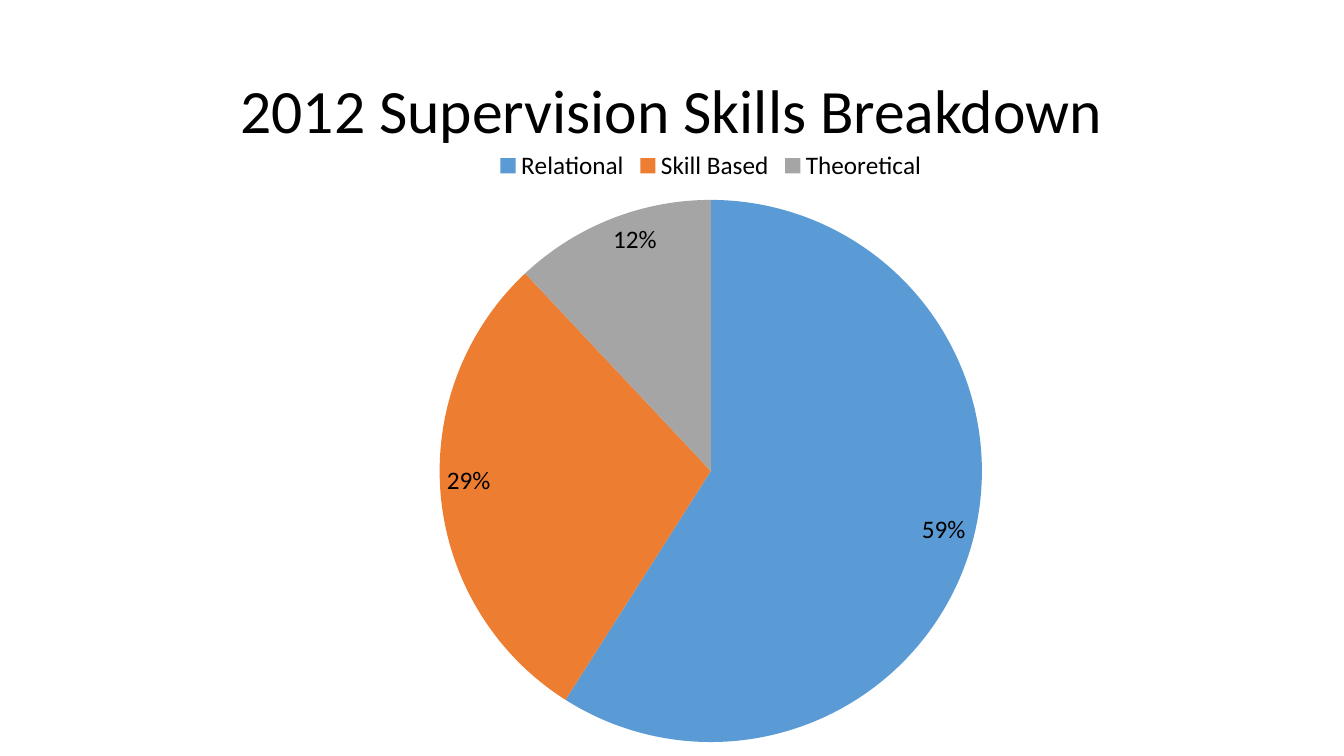
from dataclasses import dataclass

from pptx import Presentation
from pptx.chart.data import CategoryChartData
from pptx.dml.color import RGBColor
from pptx.enum.chart import XL_CHART_TYPE, XL_LABEL_POSITION, XL_LEGEND_POSITION
from pptx.enum.text import MSO_ANCHOR, PP_ALIGN
from pptx.util import Inches, Pt

PIE = XL_CHART_TYPE.PIE
INSIDE_END = XL_LABEL_POSITION.INSIDE_END
LEGEND_TOP = XL_LEGEND_POSITION.TOP
MIDDLE = MSO_ANCHOR.MIDDLE
CENTER = PP_ALIGN.CENTER

SLIDE_WIDTH, SLIDE_HEIGHT = 13.33, 7.5
BLANK_LAYOUT = 6


@dataclass(frozen=True)
class Theme:
    font: str = "Calibri"
    title_size: int = 44
    chart_size: int = 18
    text: str = "000000"
    background: str = "FFFFFF"


THEME = Theme()

# Skill: (share in percent, slice colour)
SKILLS = {
    "Relational": (59, "5B9BD5"),
    "Skill Based": (29, "ED7D31"),
    "Theoretical": (12, "A5A5A5"),
}


def style_font(font, size):
    font.name = THEME.font
    font.size = Pt(size)
    font.color.rgb = RGBColor.from_string(THEME.text)


def paint(fill, colour):
    fill.solid()
    fill.fore_color.rgb = RGBColor.from_string(colour)


def add_title(slide, text, left, top, width, height):
    box = slide.shapes.add_textbox(*map(Inches, (left, top, width, height)))
    frame = box.text_frame
    frame.word_wrap = True
    frame.vertical_anchor = MIDDLE
    paragraph = frame.paragraphs[0]
    paragraph.text = text
    paragraph.alignment = CENTER
    paragraph.line_spacing = 0.9
    style_font(paragraph.font, THEME.title_size)


def add_skills_pie(slide, skills, left, top, width, height):
    data = CategoryChartData()
    data.categories = list(skills)
    data.add_series("Series 1", [share for share, _ in skills.values()])
    frame = slide.shapes.add_chart(
        PIE, *map(Inches, (left, top, width, height)), data)
    chart = frame.chart
    chart.has_title = False
    style_font(chart.font, THEME.chart_size)

    # Legend
    chart.has_legend = True
    chart.legend.position = LEGEND_TOP
    chart.legend.include_in_layout = False

    # Slices
    plot = chart.plots[0]
    plot.vary_by_categories = True
    for index, (_, colour) in enumerate(skills.values()):
        paint(plot.series[0].points[index].format.fill, colour)

    # Percentage labels
    plot.has_data_labels = True
    labels = plot.data_labels
    labels.show_percentage = True
    labels.show_value = False
    labels.number_format = "0%"
    labels.number_format_is_linked = False
    labels.position = INSIDE_END
    style_font(labels.font, THEME.chart_size)


def main():
    presentation = Presentation()
    presentation.slide_width = Inches(SLIDE_WIDTH)
    presentation.slide_height = Inches(SLIDE_HEIGHT)
    slide = presentation.slides.add_slide(
        presentation.slide_layouts[BLANK_LAYOUT])
    paint(slide.background.fill, THEME.background)

    # Title, centred across the slide
    title_width = 11.5
    add_title(slide, "2012 Supervision Skills Breakdown",
              (SLIDE_WIDTH - title_width) / 2, 0.4, title_width, 1.45)

    # Chart, reaching down to the slide's bottom edge
    chart_top = 1.37
    add_skills_pie(slide, SKILLS, 1.45, chart_top, 11.2,
                   SLIDE_HEIGHT - chart_top)

    presentation.save("out.pptx")


if __name__ == "__main__":
    main()
